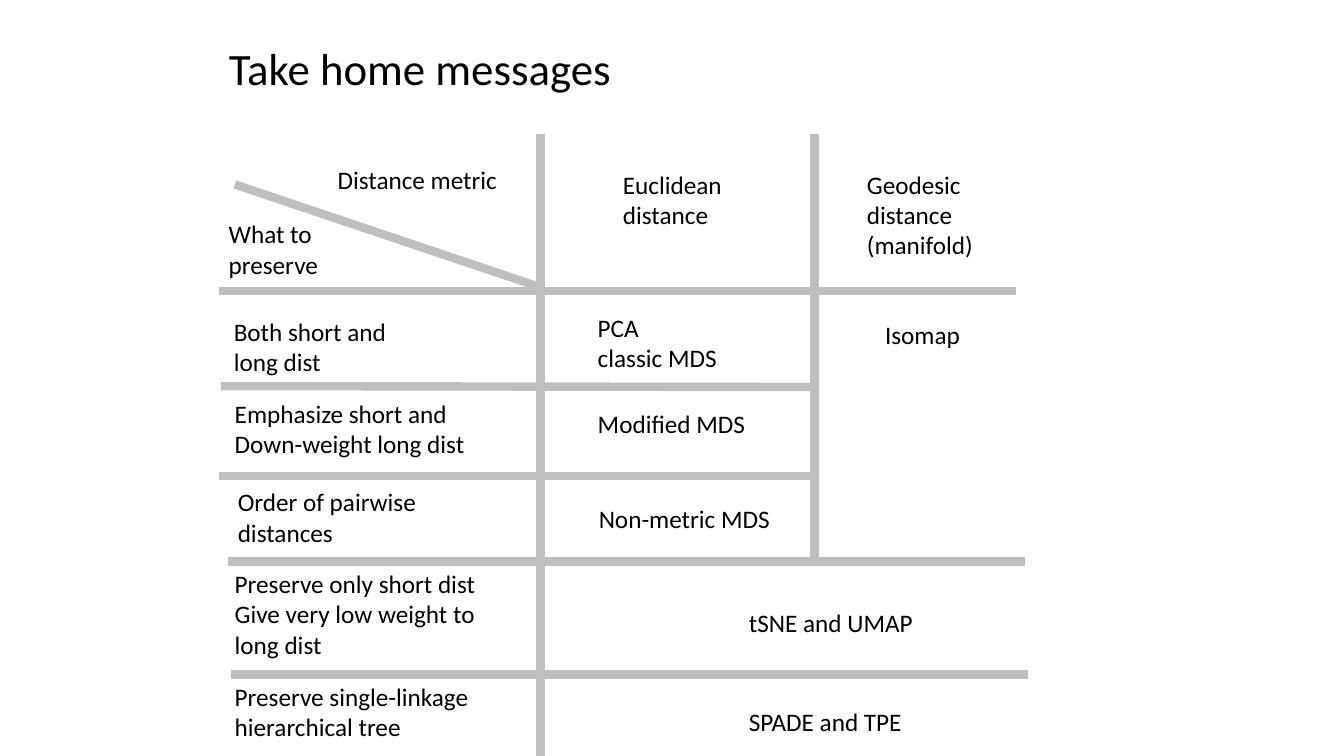
from pptx import Presentation
from pptx.dml.color import RGBColor
from pptx.enum.shapes import MSO_CONNECTOR
from pptx.enum.text import MSO_ANCHOR, MSO_AUTO_SIZE, PP_ALIGN
from pptx.oxml.ns import qn
from pptx.util import Inches, Pt
from lxml.etree import SubElement

COLORS = {"text": "000000", "rule": "BFBFBF"}
FONT = "Calibri"

# Rules: start x, start y, end x, end y
RULES = [
    (2.33, 1.83, 5.36, 2.85),
    (5.36, 1.33, 5.36, 7.5),
    (8.08, 1.33, 8.08, 5.59),
    (2.17, 2.89, 10.08, 2.89),
    (2.19, 3.83, 8.08, 3.84),
    (2.17, 4.72, 8.06, 4.72),
    (2.26, 5.57, 10.17, 5.57),
    (2.29, 6.69, 10.2, 6.69),
]

# Labels sized to their text: left, top, width, text
HEADS = [
    (3.25, 1.58, 1.8, "Distance metric"),
    (2.17, 2.12, 1.1, "What to\npreserve"),
    (6.08, 1.63, 1.19, "Euclidean\ndistance"),
    (8.5, 1.63, 1.27, "Geodesic\ndistance\n(manifold)"),
    (2.26, 4.78, 1.99, "Order of pairwise\ndistances"),
    (2.23, 5.59, 2.67,
     "Preserve only short dist\nGive very low weight to\nlong dist"),
    (2.23, 6.71, 2.6, "Preserve single-linkage\nhierarchical tree"),
]

# Labels that wrap in a fixed width: left, top, width, text
CELLS = [
    (2.22, 3.09, 1.91, "Both short and\nlong dist"),
    (2.23, 3.9, 2.76, "Emphasize short and\nDown-weight long dist"),
    (5.83, 3.05, 1.91, "PCA\nclassic MDS"),
    (5.83, 4, 1.91, "Modified MDS"),
    (5.84, 4.94, 2.25, "Non-metric MDS"),
    (8.68, 3.12, 1.16, "Isomap"),
    (7.33, 5.98, 2.17, "tSNE and UMAP"),
    (7.33, 6.96, 2.07, "SPADE and TPE"),
]


class Deck:
    def __init__(self):
        self.prs = Presentation()
        self.prs.slide_width = Inches(13.33)
        self.prs.slide_height = Inches(7.5)
        self.slide = self.prs.slides.add_slide(self.prs.slide_layouts[5])

    def style(self, frame, size):
        for para in frame.paragraphs:
            para.alignment = PP_ALIGN.LEFT
            for run in para.runs:
                run.font.name = FONT
                run.font.size = Pt(size)
                run.font.color.rgb = RGBColor.from_string(COLORS["text"])

    def title(self, text):
        shape = self.slide.shapes.title
        shape.left, shape.top = Inches(2.17), Inches(0.08)
        shape.width, shape.height = Inches(9), Inches(1.25)
        frame = shape.text_frame
        frame.text = text
        frame.vertical_anchor = MSO_ANCHOR.MIDDLE
        frame.paragraphs[0].line_spacing = 0.9
        self.style(frame, 32)

    def label(self, left, top, width, text, wrap):
        height = 0.1 + 0.3 * len(text.split("\n"))
        box = self.slide.shapes.add_textbox(
            Inches(left), Inches(top), Inches(width), Inches(height))
        frame = box.text_frame
        frame.text = text
        frame.word_wrap = wrap
        frame.auto_size = MSO_AUTO_SIZE.SHAPE_TO_FIT_TEXT
        self.style(frame, 18)

    def rule(self, *ends):
        line = self.slide.shapes.add_connector(
            MSO_CONNECTOR.STRAIGHT, *map(Inches, ends))
        line.line.color.rgb = RGBColor.from_string(COLORS["rule"])
        line.line.width = Pt(6)
        SubElement(line._element.spPr, qn("a:effectLst"))


def main():
    deck = Deck()
    deck.title("Take home messages")
    for ends in RULES:
        deck.rule(*ends)
    for head in HEADS:
        deck.label(*head, wrap=False)
    for cell in CELLS:
        deck.label(*cell, wrap=True)
    deck.prs.save("out.pptx")


if __name__ == "__main__":
    main()
